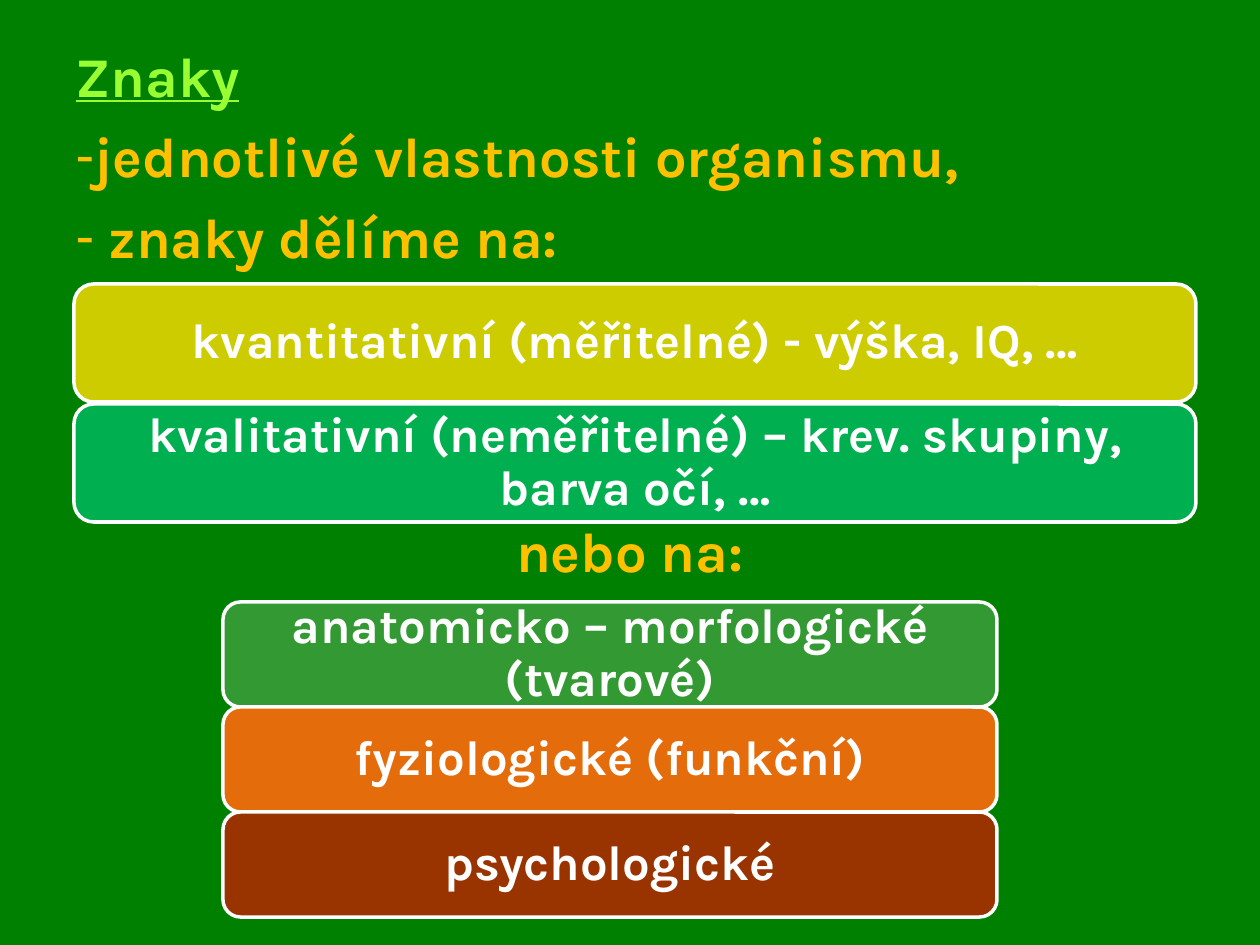
from lxml.etree import SubElement
from pptx import Presentation
from pptx.dml.color import RGBColor
from pptx.enum.shapes import MSO_SHAPE
from pptx.enum.text import MSO_ANCHOR, MSO_AUTO_SIZE, PP_ALIGN
from pptx.oxml.ns import qn
from pptx.util import Emu, Pt

PX = 914400 // 126
FONT = "Karla"

GREEN = RGBColor(0x00, 0x80, 0x00)
LIME = RGBColor(0x99, 0xFF, 0x33)
AMBER = RGBColor(0xFF, 0xC0, 0x00)
WHITE = RGBColor(0xFF, 0xFF, 0xFF)
OLIVE = RGBColor(0xCC, 0xCC, 0x00)
EMERALD = RGBColor(0x00, 0xB0, 0x50)
LEAF = RGBColor(0x33, 0x99, 0x33)
ORANGE = RGBColor(0xE4, 0x6C, 0x0A)
BROWN = RGBColor(0x99, 0x33, 0x00)

MEASURE_KINDS = [
    ("kvantitativní (měřitelné) - výška, IQ, …", OLIVE),
    ("kvalitativní (neměřitelné) – krev. skupiny, barva očí, …", EMERALD),
]
BODY_KINDS = [
    ("anatomicko – morfologické (tvarové)", LEAF),
    ("fyziologické (funkční)", ORANGE),
    ("psychologické", BROWN),
]


def px(count):
    return Emu(count * PX)


def add_span(para, text, size, color, underline=False):
    span = para.add_run()
    span.text = text
    font = span.font
    font.name, font.size, font.bold = FONT, Pt(size), True
    font.color.rgb = color
    font.underline = underline


def set_bullet(para, char=None):
    """Start the paragraph at the margin, with a dash or no bullet."""
    properties = para._p.get_or_add_pPr()
    properties.set("marL", "0")
    properties.set("indent", "0")
    if char is None:
        SubElement(properties, qn("a:buNone"))
        return
    color = SubElement(properties, qn("a:buClr"))
    SubElement(color, qn("a:srgbClr"), val=str(AMBER))
    SubElement(properties, qn("a:buFontTx"))
    SubElement(properties, qn("a:buChar"), char=char)


def fill_body(body):
    body.left, body.top, body.width, body.height = px(63), px(35), px(1134), px(808)
    frame = body.text_frame
    frame.auto_size = MSO_AUTO_SIZE.NONE
    # text, colour, bullet, space before, alignment
    lines = [
        ("Znaky", LIME, None, 7.5, PP_ALIGN.LEFT),
        ("jednotlivé vlastnosti organismu,", AMBER, "-", 7.5, PP_ALIGN.LEFT),
        (" znaky dělíme na:", AMBER, "-", 7.5, PP_ALIGN.LEFT),
        ("nebo na:", AMBER, None, 141.5, PP_ALIGN.CENTER),
    ]
    for index, (text, color, bullet, space, alignment) in enumerate(lines):
        para = frame.add_paragraph() if index else frame.paragraphs[0]
        para.alignment = alignment
        para.space_before = Pt(space)
        set_bullet(para, bullet)
        add_span(para, text, 32, color, underline=index == 0)


def add_box(page, left, top, width, height, text, color):
    box = page.shapes.add_shape(
        MSO_SHAPE.ROUNDED_RECTANGLE, px(left), px(top), px(width), px(height))
    box.shadow.inherit = False
    box.fill.solid()
    box.fill.fore_color.rgb = color
    box.line.color.rgb = WHITE
    box.line.width = Pt(2)
    frame = box.text_frame
    frame.word_wrap = True
    frame.vertical_anchor = MSO_ANCHOR.MIDDLE
    frame.margin_left = frame.margin_right = px(15)
    frame.margin_top = frame.margin_bottom = px(15)
    para = frame.paragraphs[0]
    para.alignment = PP_ALIGN.CENTER
    para.line_spacing = 0.9
    add_span(para, text, 28, WHITE)


def add_stack(page, left, top, width, height, pitch, kinds):
    for row, (text, color) in enumerate(kinds):
        add_box(page, left, top + row * pitch, width, height, text, color)


def main():
    deck = Presentation()
    deck.slide_width, deck.slide_height = px(1260), px(945)
    page = deck.slides.add_slide(deck.slide_layouts[1])
    page.background.fill.solid()
    page.background.fill.fore_color.rgb = GREEN

    # Heading and list share the body, so the title is not needed
    title = page.shapes.title.element
    title.getparent().remove(title)
    fill_body(page.placeholders[1])

    # Two ways of sorting the traits
    add_stack(page, 74, 284, 1122, 118, 120, MEASURE_KINDS)
    add_stack(page, 223, 602, 774, 105, 105, BODY_KINDS)

    deck.save("out.pptx")


if __name__ == "__main__":
    main()
